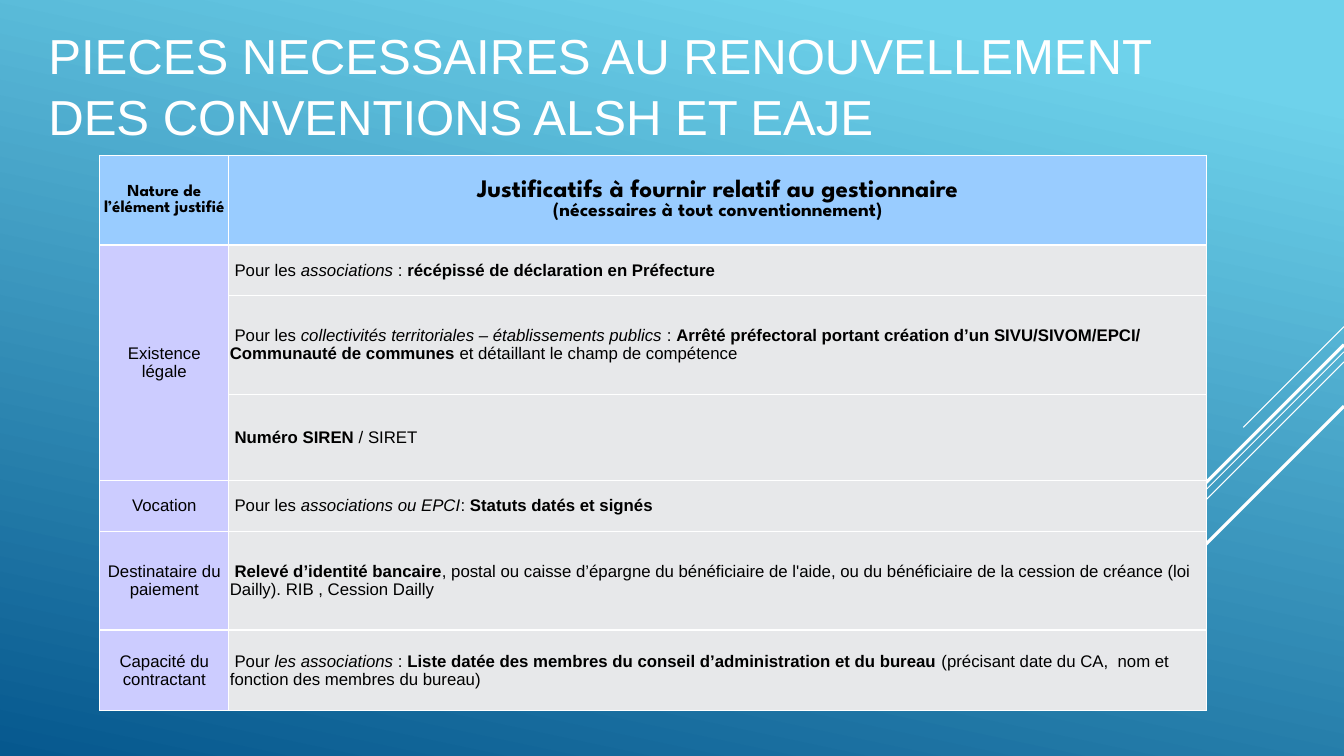
from dataclasses import dataclass

from lxml import etree
from pptx import Presentation
from pptx.dml.color import RGBColor
from pptx.enum import shapes, text
from pptx.oxml import ns
from pptx.util import Inches, Pt


@dataclass(frozen=True)
class Theme:
    white: str = "FFFFFF"
    black: str = "000000"
    sky: str = "6ED2EB"
    ocean: str = "06588E"
    header: str = "99CCFF"
    label: str = "CCCCFF"
    detail: str = "E7E8EA"
    body_font: str = "Arial"
    header_font: str = "League Spartan"
    title_size: float = 35.1
    heading_size: float = 18
    subheading_size: float = 14
    body_size: float = 12


THEME = Theme()
TITLE = "PIECES NECESSAIRES AU RENOUVELLEMENT DES CONVENTIONS ALSH ET EAJE"
COLUMN_WIDTHS = (1.28, 9.7)
ROW_HEIGHTS = (0.89, 0.5, 0.98, 0.86, 0.5, 0.98, 0.8)
HEADERS = (
    [("Nature de l’élément justifié", THEME.body_size)],
    [("Justificatifs à fournir relatif au gestionnaire", THEME.heading_size),
     ("(nécessaires à tout conventionnement)", THEME.subheading_size)],
)
# Each label covers one or more rows of (wording, style) pieces: b bold, i italic.
REQUIREMENTS = [
    (["Existence", "légale"], [
        [(" Pour les ", ""), ("associations", "i"), (" : ", ""),
         ("récépissé de déclaration en Préfecture", "b")],
        [(" Pour les ", ""),
         ("collectivités territoriales – établissements publics ", "i"), (": ", ""),
         ("Arrêté préfectoral portant création d’un SIVU/SIVOM/EPCI/ "
          "Communauté de communes", "b"),
         (" et détaillant le champ de compétence", "")],
        [(" ", ""), ("Numéro SIREN ", "b"), ("/ SIRET", "")],
    ]),
    (["Vocation"], [
        [(" Pour les ", ""), ("associations ou EPCI", "i"), (": ", ""),
         ("Statuts datés et signés", "b")],
    ]),
    (["Destinataire du paiement"], [
        [(" ", ""), ("Relevé d’identité bancaire", "b"),
         (", postal ou caisse d’épargne du bénéficiaire de l'aide, ou du bénéficiaire "
          "de la cession de créance (loi Dailly). RIB , Cession Dailly", "")],
    ]),
    (["Capacité du contractant"], [
        [(" Pour ", ""), ("les associations ", "i"), (": ", ""),
         ("Liste datée des membres du conseil d’administration et du bureau ", "b"),
         ("(précisant date du CA,  nom et fonction des membres du bureau)", "")],
    ]),
]
# Right-edge height, horizontal run and weight of each 45° stripe.
STRIPES = [(3.24, 1, 0.75), (3.49, 3.26, 0.75), (3.59, 2.07, 0.75),
           (3.42, 1.91, 2.25), (4.03, 1.39, 2.25)]


def rgb(value):
    return RGBColor.from_string(value)


def format_font(font, name, size, color, bold=False, italic=False):
    font.name, font.size = name, Pt(size)
    font.bold, font.italic = bold, italic
    font.color.rgb = rgb(color)


def paint_background(slide):
    fill = slide.background.fill
    fill.gradient()
    fill.gradient_angle = 258
    for stop, position, color in zip(fill.gradient_stops, (0.1, 1),
                                     (THEME.sky, THEME.ocean)):
        stop.position = position
        stop.color.rgb = rgb(color)


def add_stripes(slide, right):
    for top, run, weight in STRIPES:
        stripe = slide.shapes.add_connector(
            shapes.MSO_CONNECTOR.STRAIGHT, Inches(right), Inches(top),
            Inches(right - run), Inches(top + run))
        stripe.line.color.rgb = rgb(THEME.white)
        stripe.line.width = Pt(weight)
        etree.SubElement(stripe.element.spPr, ns.qn("a:effectLst"))


def place_title(slide, left, top, width, height):
    title = slide.shapes.title
    title.left, title.top = Inches(left), Inches(top)
    title.width, title.height = Inches(width), Inches(height)
    frame = title.text_frame
    frame.text = TITLE
    frame.word_wrap = True
    frame.auto_size = text.MSO_AUTO_SIZE.NONE
    frame.vertical_anchor = text.MSO_ANCHOR.MIDDLE
    heading = frame.paragraphs[0]
    heading.alignment = text.PP_ALIGN.LEFT
    heading.line_spacing = 1.04
    format_font(heading.runs[0].font, THEME.body_font, THEME.title_size, THEME.white)


def style_cell(cell, color):
    """Draw white borders around the cell, then set its fill, insets and anchor."""
    properties = cell._tc.get_or_add_tcPr()
    for side in ("L", "R", "T", "B"):
        border = etree.SubElement(properties, ns.qn(f"a:ln{side}"), w=str(Pt(1)))
        solid = etree.SubElement(border, ns.qn("a:solidFill"))
        etree.SubElement(solid, ns.qn("a:srgbClr"), val=THEME.white)
    cell.fill.solid()
    cell.fill.fore_color.rgb = rgb(color)
    cell.margin_left = cell.margin_right = cell.margin_top = Inches(0.01)
    cell.margin_bottom = 0
    cell.vertical_anchor = text.MSO_ANCHOR.MIDDLE


def write_header(cell, lines):
    cell.text = "\n".join(wording for wording, _ in lines)
    for paragraph, (_, size) in zip(cell.text_frame.paragraphs, lines):
        paragraph.alignment = text.PP_ALIGN.CENTER
        format_font(paragraph.runs[0].font, THEME.header_font, size, THEME.black, bold=True)


def write_label(cell, lines):
    cell.text = "\n".join(lines)
    for paragraph in cell.text_frame.paragraphs:
        paragraph.alignment = text.PP_ALIGN.CENTER
        paragraph.line_spacing = 0.95
        format_font(paragraph.runs[0].font, THEME.body_font, THEME.body_size, THEME.black)


def write_detail(cell, pieces):
    paragraph = cell.text_frame.paragraphs[0]
    paragraph.line_spacing = 0.95
    for wording, style in pieces:
        run = paragraph.add_run()
        run.text = wording
        format_font(run.font, THEME.body_font, THEME.body_size, THEME.black,
                    bold=style == "b", italic=style == "i")


def add_requirements(slide, left, top):
    table = slide.shapes.add_table(
        len(ROW_HEIGHTS), len(COLUMN_WIDTHS), Inches(left), Inches(top),
        Inches(sum(COLUMN_WIDTHS)), Inches(sum(ROW_HEIGHTS))).table
    table.horz_banding = False
    for column, width in zip(table.columns, COLUMN_WIDTHS):
        column.width = Inches(width)
    for index, (row, height) in enumerate(zip(table.rows, ROW_HEIGHTS)):
        row.height = Inches(height)
        colors = (THEME.label, THEME.detail) if index else (THEME.header, THEME.header)
        for cell, color in zip(row.cells, colors):
            style_cell(cell, color)
    for column, lines in enumerate(HEADERS):
        write_header(table.cell(0, column), lines)

    first = 1
    for label, details in REQUIREMENTS:
        last = first + len(details) - 1
        if last > first:
            table.cell(first, 0).merge(table.cell(last, 0))
        write_label(table.cell(first, 0), label)
        for row, pieces in enumerate(details, first):
            write_detail(table.cell(row, 1), pieces)
        first = last + 1


def main():
    deck = Presentation()
    deck.slide_width, deck.slide_height = Inches(13.33), Inches(7.5)
    slide = deck.slides.add_slide(deck.slide_layouts[5])
    paint_background(slide)
    add_stripes(slide, 13.33)
    add_requirements(slide, 0.99, 1.54)
    place_title(slide, 0.38, 0.13, 12.21, 1.41)
    deck.save("out.pptx")


if __name__ == "__main__":
    main()
